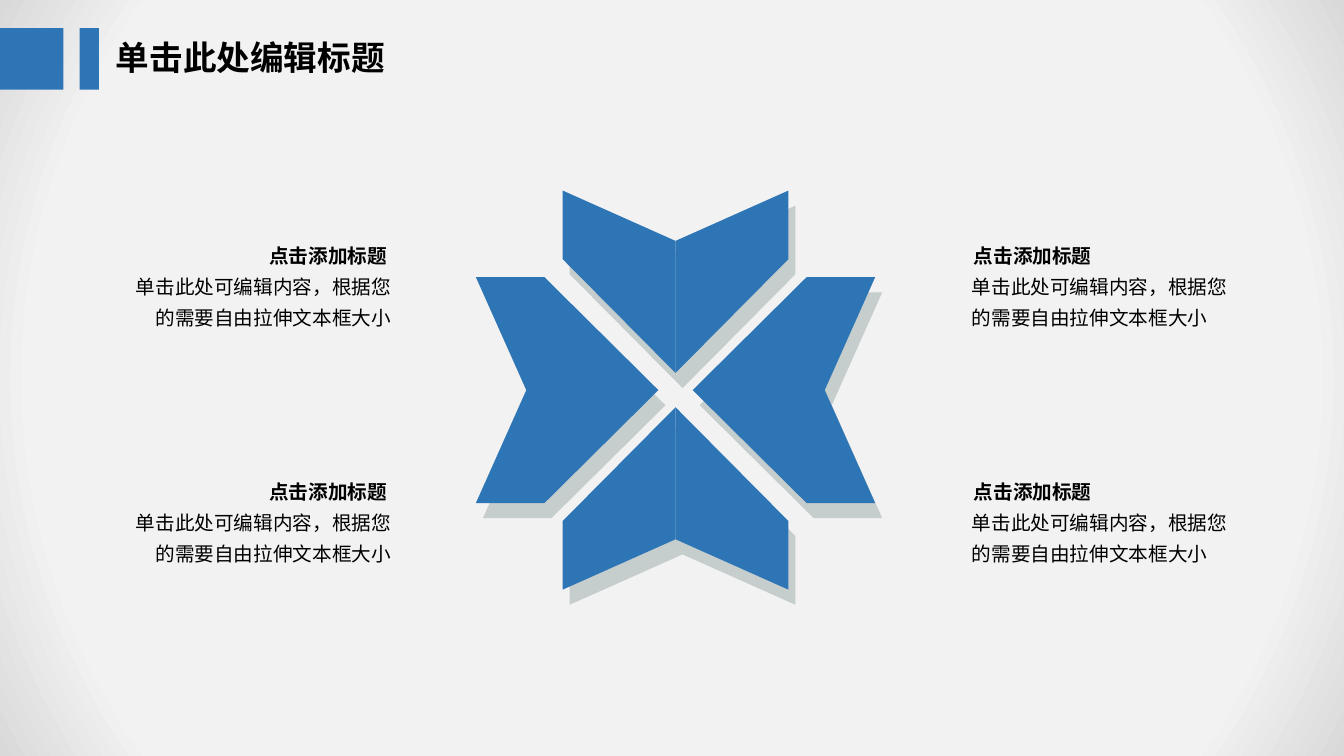
from lxml import etree
from pptx import Presentation
from pptx import util as u
from pptx.dml.color import RGBColor
from pptx.enum import shapes, text
from pptx.oxml.ns import qn

BLUE, SHADOW, BLACK = "2E75B6", "C5CDCD", "000000"
HEADING_FONT, BODY_FONT = "Noto Sans CJK SC", "Calibri"
HEADING = "点击添加标题"
BODY = "单击此处可编辑内容，根据您的需要自由拉伸文本框大小"

# Outward and sideways distances from the centre of the cross
TIP, NOTCH = (0.17, 0), (1.48, 0)
SHOULDER, CORNER = (1.3, 1.12), (1.98, 1.12)
DIRECTIONS = [(0, -1), (1, 0), (0, 1), (-1, 0)]


def rgb(color):
    return RGBColor.from_string(color)


def paint(shape, color):
    shape.fill.solid()
    shape.fill.fore_color.rgb = rgb(color)
    shape.line.fill.background()
    shape.shadow.inherit = False


def write(frame, words, size, font, bold, align, spacing):
    frame.word_wrap = True
    frame.text = words
    paragraph = frame.paragraphs[0]
    paragraph.alignment = align
    paragraph.line_spacing = spacing
    run = paragraph.runs[0]
    run.font.size = u.Pt(size)
    run.font.name = font
    run.font.bold = bold
    run.font.color.rgb = rgb(BLACK)
    east_asian = etree.Element(qn("a:ea"), typeface=font)
    run.font._element.find(qn("a:latin")).addnext(east_asian)
    return paragraph


def set_background(slide):
    """Light grey, darkening radially towards the corners."""
    fill = slide.background.fill
    fill.gradient()
    for stop, (position, color) in zip(fill.gradient_stops, [(0.83, "F2F2F2"), (1, "D9D9D9")]):
        stop.position = position
        stop.color.rgb = rgb(color)
    gradient = next(slide._element.iter(qn("a:gradFill")))
    gradient.remove(gradient.find(qn("a:lin")))
    radial = etree.SubElement(gradient, qn("a:path"), path="circle")
    etree.SubElement(radial, qn("a:fillToRect"), l="50000", t="50000", r="50000", b="50000")


def add_header(slide, top, height):
    for left, width in [(0, 0.63), (0.79, 0.19)]:
        bar = slide.shapes.add_shape(
            shapes.MSO_SHAPE.RECTANGLE,
            u.Inches(left), u.Inches(top), u.Inches(width), u.Inches(height))
        paint(bar, BLUE)
    title = slide.shapes.title
    title.left, title.top = u.Inches(1.05), u.Inches(top + 0.1)
    title.width, title.height = u.Inches(2.97), u.Inches(0.43)
    title.text_frame.vertical_anchor = text.MSO_ANCHOR.MIDDLE
    title.text_frame.auto_size = text.MSO_AUTO_SIZE.NONE
    write(title.text_frame, "单击此处编辑标题", 24, HEADING_FONT, True, text.PP_ALIGN.LEFT, 0.9)


def add_outline(slide, center_x, center_y, direction, outline, color):
    """Draw (outward, sideways) points turned to face the direction."""
    dx, dy = direction
    points = [(u.Inches(center_x + out * dx - side * dy),
               u.Inches(center_y + out * dy + side * dx))
              for out, side in outline]
    builder = slide.shapes.build_freeform(*points[0])
    builder.add_line_segments(points[1:], close=True)
    paint(builder.convert_to_shape(), color)


def add_arrow_cross(slide, center_x, center_y):
    """Four inward arrows, each in two halves, above their offset shadows."""
    halves = [[TIP, (SHOULDER[0], sign * SHOULDER[1]), (CORNER[0], sign * CORNER[1]), NOTCH]
              for sign in (-1, 1)]
    whole = halves[0] + halves[1][2:0:-1]
    for direction in DIRECTIONS:
        add_outline(slide, center_x + 0.07, center_y + 0.15, direction, whole, SHADOW)
    for direction in DIRECTIONS:
        for half in halves:
            add_outline(slide, center_x, center_y, direction, half, BLUE)


def add_label(slide, left, top, heading_indent, align):
    heading = slide.shapes.add_textbox(
        u.Inches(left + heading_indent), u.Inches(top), u.Inches(1.53), u.Inches(0.41))
    write(heading.text_frame, HEADING, 14, HEADING_FONT, True, align, 1.3)
    body = slide.shapes.add_textbox(
        u.Inches(left), u.Inches(top + 0.31), u.Inches(2.83), u.Inches(0.71))
    paragraph = write(body.text_frame, BODY, 14, BODY_FONT, False, align, 1.3)
    paragraph.space_before = u.Pt(2.8)


def main():
    deck = Presentation()
    deck.slide_width, deck.slide_height = u.Inches(13.33), u.Inches(7.5)
    slide = deck.slides.add_slide(deck.slide_layouts[5])
    set_background(slide)
    add_arrow_cross(slide, 6.7, 3.87)
    for top in (2.3, 4.64):
        add_label(slide, 1.15, top, 1.26, text.PP_ALIGN.RIGHT)
        add_label(slide, 9.54, top, 0.02, text.PP_ALIGN.LEFT)
    add_header(slide, 0.28, 0.61)
    deck.save("out.pptx")


if __name__ == "__main__":
    main()
